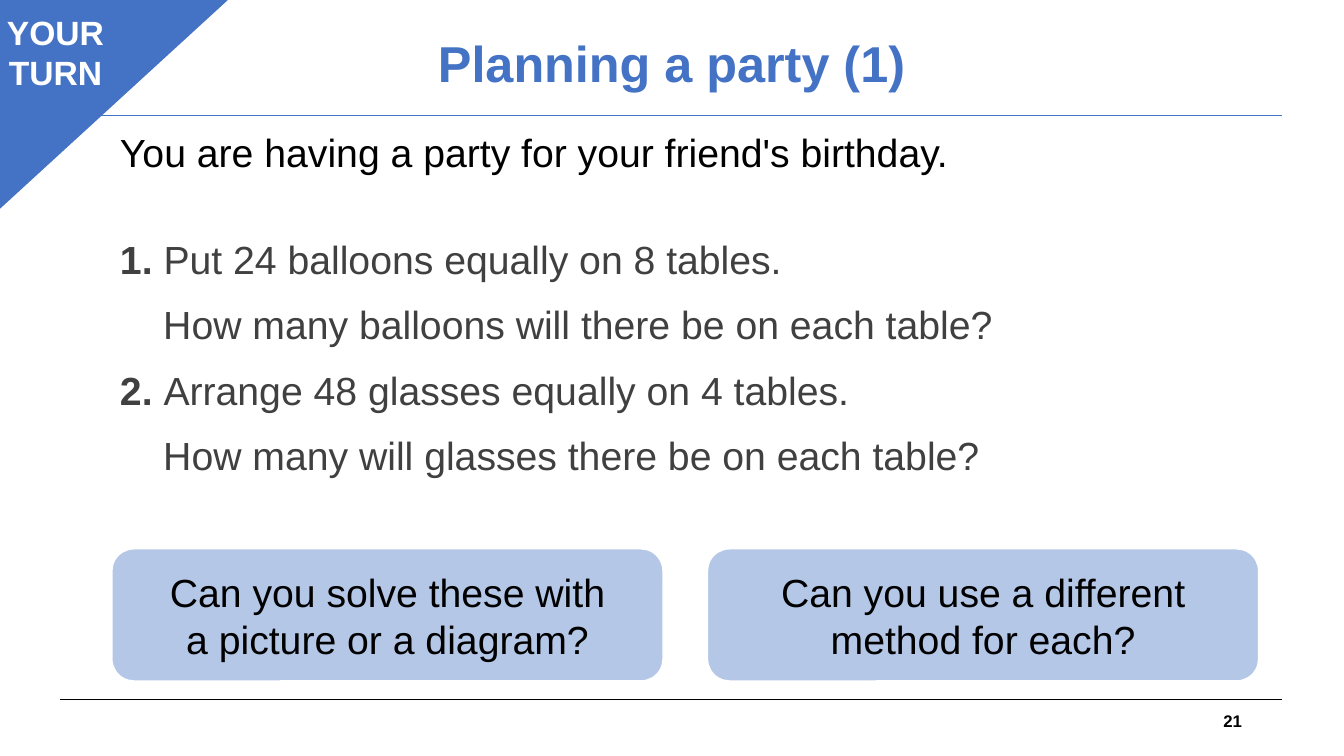
import pptx
import pptx.dml.color
import pptx.enum.shapes
import pptx.enum.text
import pptx.oxml
import pptx.oxml.ns
import pptx.util

Cm = pptx.util.Cm
Pt = pptx.util.Pt
RGBColor = pptx.dml.color.RGBColor
Shapes = pptx.enum.shapes.MSO_SHAPE
Align = pptx.enum.text.PP_ALIGN
Anchor = pptx.enum.text.MSO_ANCHOR

BLUE = RGBColor(0x44, 0x72, 0xC4)
PALE_BLUE = RGBColor(0xB4, 0xC7, 0xE7)
BLACK = RGBColor(0, 0, 0)
GREY = RGBColor(0x40, 0x40, 0x40)
WHITE = RGBColor(0xFF, 0xFF, 0xFF)

INTRO = "You are having a party for your friend's birthday."
TASKS = [
    ("1. ", "Put 24 balloons equally on 8 tables.",
     "How many balloons will there be on each table?"),
    ("2. ", "Arrange 48 glasses equally on 4 tables.",
     "How many will glasses there be on each table?"),
]
PROMPTS = [
    "Can you solve these with\va picture or a diagram?",
    "Can you use a different\vmethod for each?",
]


def set_all(target, values):
    for key, value in values.items():
        setattr(target, key, value)


def place(shape, left, top, width, height):
    set_all(shape, {"left": Cm(left), "top": Cm(top),
                    "width": Cm(width), "height": Cm(height)})


def set_font(font, size, color, bold=False):
    set_all(font, {"name": "Arial", "size": Pt(size), "bold": bold})
    font.color.rgb = color


def write(shape, text, size, color, bold=False, align=Align.CENTER):
    """Fill a shape with vertically centred text in one format."""
    frame = shape.text_frame
    set_all(frame, {"text": text, "word_wrap": True,
                    "auto_size": pptx.enum.text.MSO_AUTO_SIZE.NONE,
                    "vertical_anchor": Anchor.MIDDLE})
    for paragraph in frame.paragraphs:
        paragraph.alignment = align
        for run in paragraph.runs:
            set_font(run.font, size, color, bold)


def add_rule(slide, y, color):
    rule = slide.shapes.add_connector(
        pptx.enum.shapes.MSO_CONNECTOR.STRAIGHT, Cm(1.5), Cm(y), Cm(32.31), Cm(y))
    rule.line.color.rgb = color
    rule.line.width = Pt(0.75)
    rule._element.spPr.append(pptx.oxml.parse_xml(
        "<a:effectLst %s/>" % pptx.oxml.ns.nsdecls("a")))


def add_block(slide, kind, box, fill, line):
    block = slide.shapes.add_shape(kind, *map(Cm, box))
    block.shadow.inherit = False
    block.fill.solid()
    block.fill.fore_color.rgb = fill
    block.line.color.rgb = line
    block.line.width = Pt(1)
    return block


def add_body_line(paragraph, parts, color, indent=0, **spacing):
    """Write (text, bold) parts into an unbulleted paragraph."""
    properties = paragraph._p.get_or_add_pPr()
    properties.set("marL", str(Cm(indent)))
    properties.set("indent", "0")
    set_all(paragraph, {"alignment": Align.LEFT, "line_spacing": 1.0,
                        "space_before": Pt(0), "space_after": Pt(0)})
    set_all(paragraph, spacing)
    properties.append(pptx.oxml.parse_xml(
        "<a:buNone %s/>" % pptx.oxml.ns.nsdecls("a")))
    for text, bold in parts:
        run = paragraph.add_run()
        run.text = text
        set_font(run.font, 28, color, bold)


def fill_body(body):
    place(body, 2.77, 3.1, 30.15, 10.67)
    frame = body.text_frame
    set_all(frame, {"word_wrap": True, "vertical_anchor": Anchor.TOP,
                    "auto_size": pptx.enum.text.MSO_AUTO_SIZE.NONE})
    add_body_line(frame.paragraphs[0], [(INTRO, False)], BLACK)
    gap = Pt(38)
    for number, task, question in TASKS:
        spacing = {"line_spacing": 1.15, "space_after": Pt(4)}
        add_body_line(frame.add_paragraph(), [(number, True), (task, False)],
                      GREY, space_before=gap, **spacing)
        gap = Pt(4)
        add_body_line(frame.add_paragraph(), [(question, False)],
                      GREY, indent=1.09, space_before=gap, **spacing)


def add_corner_flag(slide):
    corner = add_block(slide, Shapes.ISOSCELES_TRIANGLE,
                       (-0.1, 0, 5.82, 5.33), BLUE, BLUE)
    corner.adjustments[0] = 0
    corner._element.spPr.find(pptx.oxml.ns.qn("a:xfrm")).set("flipV", "1")
    label = add_block(slide, Shapes.RECTANGLE, (-0.1, 0.25, 3, 2.11), BLUE, BLUE)
    set_all(label.text_frame, {"margin_left": 0, "margin_right": 0})
    write(label, "YOUR\nTURN", 24, WHITE, bold=True)


def main():
    deck = pptx.Presentation()
    set_all(deck, {"slide_width": Cm(33.87), "slide_height": Cm(19.05)})
    slide = deck.slides.add_slide(deck.slide_layouts[1])

    add_rule(slide, 17.63, BLACK)
    add_rule(slide, 2.9, BLUE)

    title = slide.shapes.title
    place(title, 9.63, 0.25, 14.6, 2.82)
    write(title, "Planning a party (1)", 36, BLUE, bold=True)
    title.text_frame.paragraphs[0].line_spacing = 0.9
    fill_body(slide.placeholders[1])

    for index, prompt in enumerate(PROMPTS):
        card = add_block(slide, Shapes.ROUNDED_RECTANGLE,
                         (2.82 + 15.01 * index, 13.83, 13.89, 3.33),
                         PALE_BLUE, WHITE)
        write(card, prompt, 28, BLACK)

    add_corner_flag(slide)
    page_number = slide.shapes.add_textbox(Cm(23.93), Cm(17.65), Cm(7.62), Cm(1.02))
    write(page_number, "21", 12, BLACK, bold=True, align=Align.RIGHT)

    deck.save("out.pptx")


if __name__ == "__main__":
    main()
